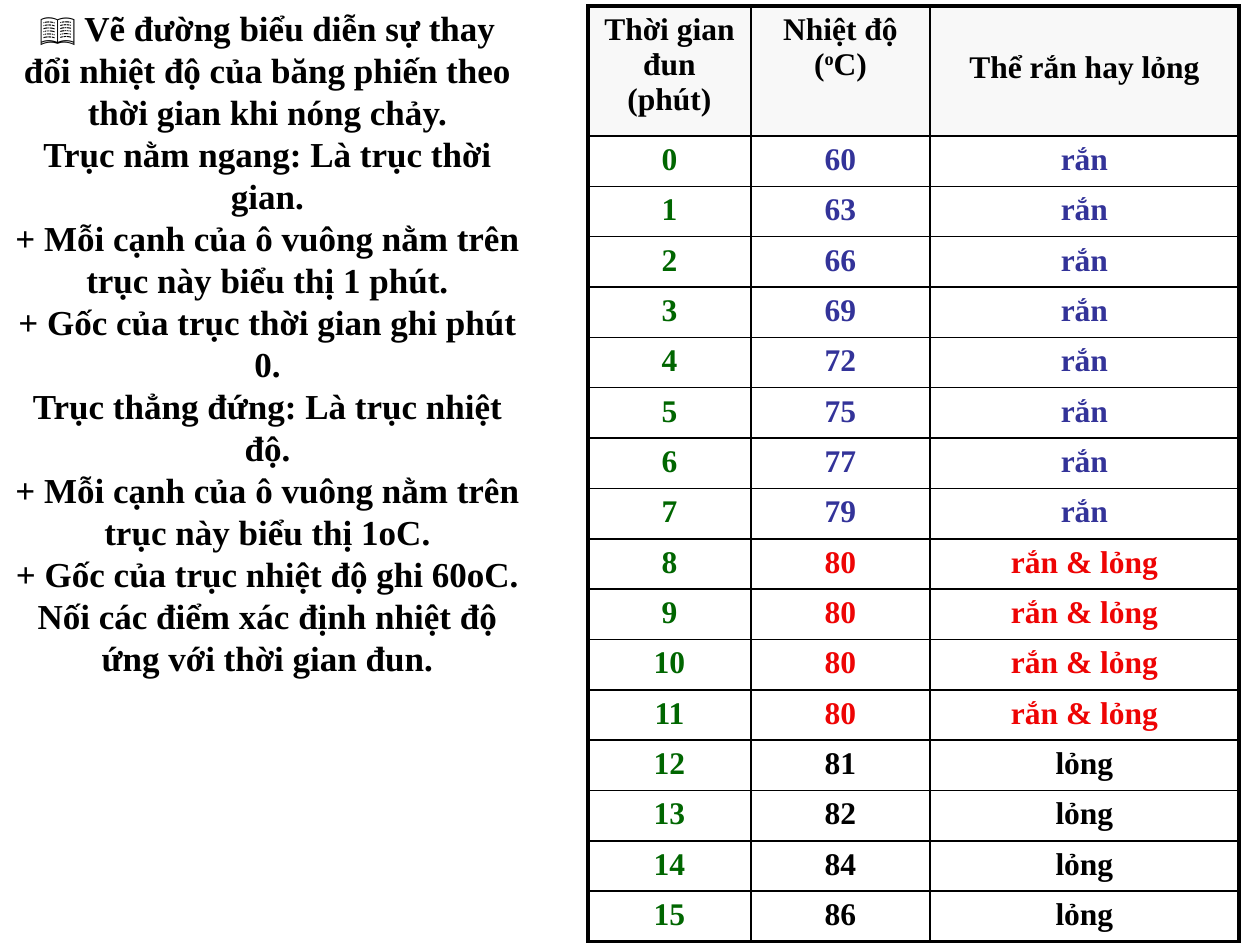
from lxml.etree import SubElement
from pptx import Presentation
from pptx.dml.color import RGBColor
from pptx.enum.text import MSO_AUTO_SIZE, PP_ALIGN
from pptx.oxml.ns import qn
from pptx.util import Pt

PX = 914400 / 126
BLACK, GREEN, BLUE, RED = "000000", "006600", "333399", "EE0404"


def px(n):
    return round(n * PX)


def add_run(p, text, size, color):
    p.alignment = PP_ALIGN.CENTER
    r = p.add_run()
    r.text = text
    r.font.name = "Times New Roman"
    r.font.size = Pt(size)
    r.font.bold = True
    r.font.color.rgb = RGBColor.from_string(color)
    return r


prs = Presentation()
prs.slide_width, prs.slide_height = px(1260), px(945)
s = prs.slides.add_slide(prs.slide_layouts[6])

headers = [["Thời gian đun (phút)"], ["Nhiệt độ (", "o", "C)"], ["Thể rắn hay lỏng"]]
temps = [60, 63, 66, 69, 72, 75, 77, 79, 80, 80, 80, 80, 81, 82, 84, 86]
rows = [(headers, [BLACK] * 3)]
for minute, temp in enumerate(temps):
    if temp < 80:
        state, color = "rắn", BLUE
    elif temp == 80:
        state, color = "rắn & lỏng", RED
    else:
        state, color = "lỏng", BLACK
    rows.append(([[str(minute)], [str(temp)], [state]], [GREEN, color, color]))

widths = [163, 179, 309]
header_h, table_h = 130, 936
last_row, last_col = len(rows) - 1, len(widths) - 1
table = s.shapes.add_table(len(rows), len(widths), px(588), px(6), px(sum(widths)), px(table_h)).table
table.first_row = False
table.horz_banding = False
for col, width in zip(table.columns, widths):
    col.width = px(width)
for i, row in enumerate(table.rows):
    row.height = px(header_h if i == 0 else (table_h - header_h) / len(temps))

for i, (texts, colors) in enumerate(rows):
    for j, (parts, color) in enumerate(zip(texts, colors)):
        cell = table.cell(i, j)
        p = cell.text_frame.paragraphs[0]
        for part in parts:
            r = add_run(p, part, 18, color)
            if part == "o":
                r._r.get_or_add_rPr().set("baseline", "30000")
        tcPr = cell._tc.get_or_add_tcPr()
        edges = {"lnL": j == 0, "lnR": j == last_col, "lnT": i == 0, "lnB": i == last_row}
        for tag, outer in edges.items():
            ln = SubElement(tcPr, qn(f"a:{tag}"), w=str(Pt(2.25 if outer else 1)))
            fill = SubElement(ln, qn("a:solidFill"))
            SubElement(fill, qn("a:srgbClr"), val=BLACK)
        if i == 0:
            cell.fill.solid()
            cell.fill.fore_color.rgb = RGBColor.from_string("F8F8F8")
        else:
            cell.fill.background()
table.cell(0, last_col).margin_top = px(44)

instructions = [
    "📖 Vẽ đường biểu diễn sự thay đổi nhiệt độ của băng phiến theo thời gian khi nóng chảy.",
    "Trục nằm ngang: Là trục thời gian.",
    "+ Mỗi cạnh của ô vuông nằm trên trục này biểu thị 1 phút.",
    "+ Gốc của trục thời gian ghi phút 0.",
    "Trục thẳng đứng: Là trục nhiệt độ.",
    "+ Mỗi cạnh của ô vuông nằm trên trục này biểu thị 1oC.",
    "+ Gốc của trục nhiệt độ ghi 60oC.",
    "Nối các điểm xác định nhiệt độ ứng với thời gian đun.",
]
sp = s.shapes.add_textbox(0, 0, px(535), px(692))
tf = sp.text_frame
tf.word_wrap = True
tf.auto_size = MSO_AUTO_SIZE.SHAPE_TO_FIT_TEXT
for i, line in enumerate(instructions):
    p = tf.add_paragraph() if i else tf.paragraphs[0]
    add_run(p, line, 20, BLACK)

prs.save("out.pptx")
